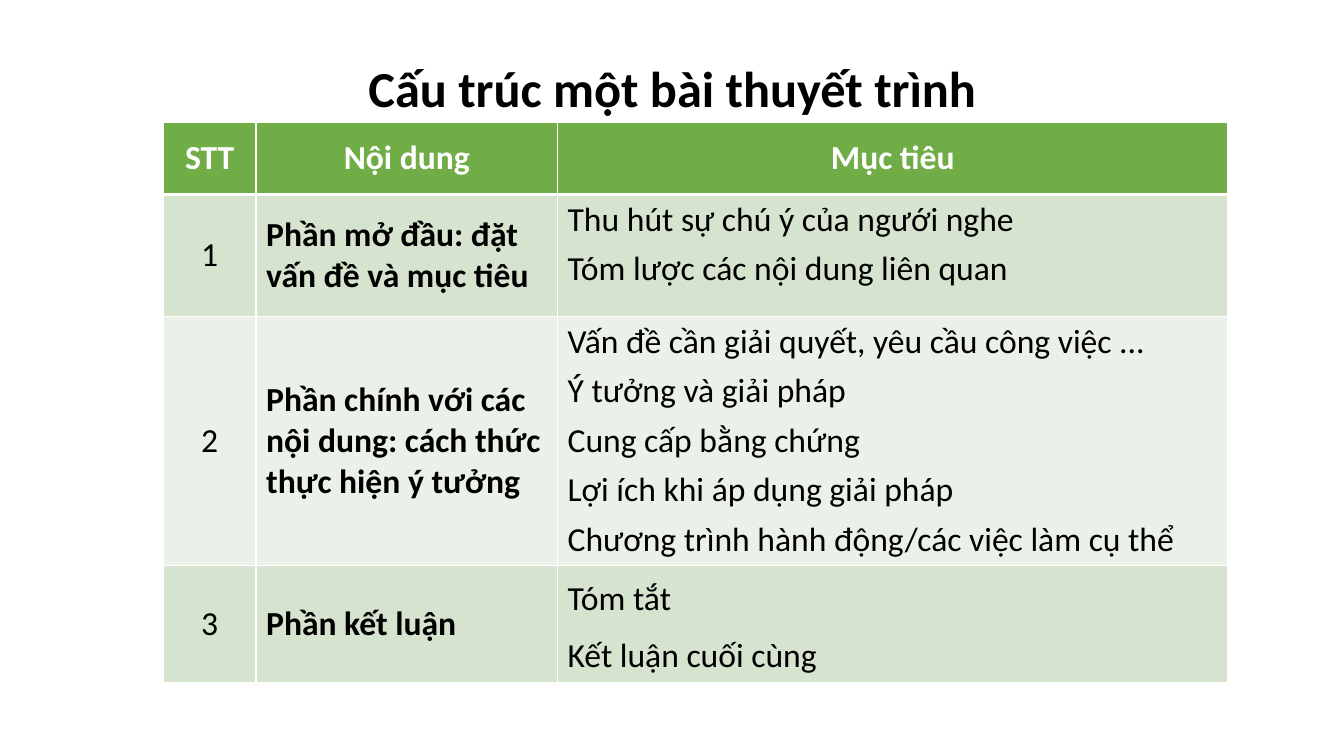
from lxml import etree
from pptx import Presentation
from pptx import util as u
from pptx.dml.color import RGBColor
from pptx.enum import text
from pptx.oxml import ns

WHITE = RGBColor(0xFF, 0xFF, 0xFF)
BLACK = RGBColor(0, 0, 0)
GREEN = RGBColor(0x70, 0xAD, 0x47)
PALE = RGBColor(0xD5, 0xE3, 0xCF)
MIST = RGBColor(0xEB, 0xF1, 0xE9)

LEFT, MID = text.PP_ALIGN.LEFT, text.PP_ALIGN.CENTER
FULL = text.PP_ALIGN.JUSTIFY
TOP, HALF = text.MSO_ANCHOR.TOP, text.MSO_ANCHOR.MIDDLE

HEADS = ["STT", "Nội dung", "Mục tiêu"]
PARTS = [
    ("Phần mở đầu: đặt vấn đề và mục tiêu",
     ["Thu hút sự chú ý của ngưới nghe",
      "Tóm lược các nội dung liên quan"], 1),
    ("Phần chính với các nội dung: cách thức thực hiện ý tưởng",
     ["Vấn đề cần giải quyết, yêu cầu công việc ...",
      "Ý tưởng và giải pháp",
      "Cung cấp bằng chứng",
      "Lợi ích khi áp dụng giải pháp",
      "Chương trình hành động/các việc làm cụ thể"], 1),
    ("Phần kết luận", ["Tóm tắt", "Kết luận cuối cùng"], 1.2),
]


def assign(item, values):
    for name, value in values.items():
        setattr(item, name, value)


class Deck:
    font = "Calibri"

    def __init__(self):
        self.show = Presentation()
        assign(self.show, {"slide_width": u.Inches(13.33),
                           "slide_height": u.Inches(7.5)})
        self.slide = self.show.slides.add_slide(self.show.slide_layouts[5])

    def letter(self, frame, lines, size, color, bold, para):
        frame.text = "\n".join(lines)
        for line in frame.paragraphs:
            assign(line, para)
            for run in line.runs:
                assign(run.font, {"name": self.font, "size": u.Pt(size),
                                  "bold": bold})
                run.font.color.rgb = color

    def title(self, words, left, top, width, height):
        head = self.slide.shapes.title
        assign(head, {"left": u.Inches(left), "top": u.Inches(top),
                      "width": u.Inches(width), "height": u.Inches(height)})
        assign(head.text_frame, {"vertical_anchor": HALF, "word_wrap": True,
                                 "auto_size": text.MSO_AUTO_SIZE.NONE})
        self.letter(head.text_frame, [words], 36, BLACK, True,
                    {"alignment": MID, "line_spacing": 0.9})

    def table(self, left, top, widths, heights):
        frame = self.slide.shapes.add_table(
            len(heights), len(widths), u.Inches(left), u.Inches(top),
            u.Inches(sum(widths)), u.Inches(sum(heights)))
        grid = frame.table
        for col, width in zip(grid.columns, widths):
            col.width = u.Inches(width)
        for row, height in zip(grid.rows, heights):
            row.height = u.Inches(height)
        return grid

    def edge(self, cell, side, width):
        props = cell._tc.get_or_add_tcPr()
        line = etree.SubElement(props, ns.qn("a:ln" + side),
                                w=str(u.Pt(width)))
        fill = etree.SubElement(line, ns.qn("a:solidFill"))
        etree.SubElement(fill, ns.qn("a:srgbClr"), val=str(WHITE))

    def cell(self, cell, lines, fill, color=BLACK, bold=False, align=MID,
             anchor=HALF, space=1, above=1, below=1):
        for side, width in zip("LRTB", (1, 1, above, below)):
            self.edge(cell, side, width)
        cell.fill.solid()
        cell.fill.fore_color.rgb = fill
        cell.vertical_anchor = anchor
        self.letter(cell.text_frame, lines, 24, color, bold,
                    {"alignment": align, "space_before": u.Pt(6),
                     "line_spacing": space})


def main():
    deck = Deck()
    deck.title("Cấu trúc một bài thuyết trình", 0.92, 0.4, 11.5, 1)
    grid = deck.table(1.62, 1.21, [0.92, 2.99, 6.65],
                      [0.72, 1.21, 2.29, 1.16])
    for col, head in enumerate(HEADS):
        deck.cell(grid.cell(0, col), [head], GREEN, WHITE, True, below=3)
    for row, (part, goals, space) in enumerate(PARTS, 1):
        fill = PALE if row % 2 else MIST
        above = 3 if row == 1 else 1
        deck.cell(grid.cell(row, 0), [str(row)], fill, above=above)
        deck.cell(grid.cell(row, 1), [part], fill, bold=True, align=LEFT,
                  above=above)
        deck.cell(grid.cell(row, 2), goals, fill, align=FULL, anchor=TOP,
                  space=space, above=above)
    deck.show.save("out.pptx")


if __name__ == "__main__":
    main()
